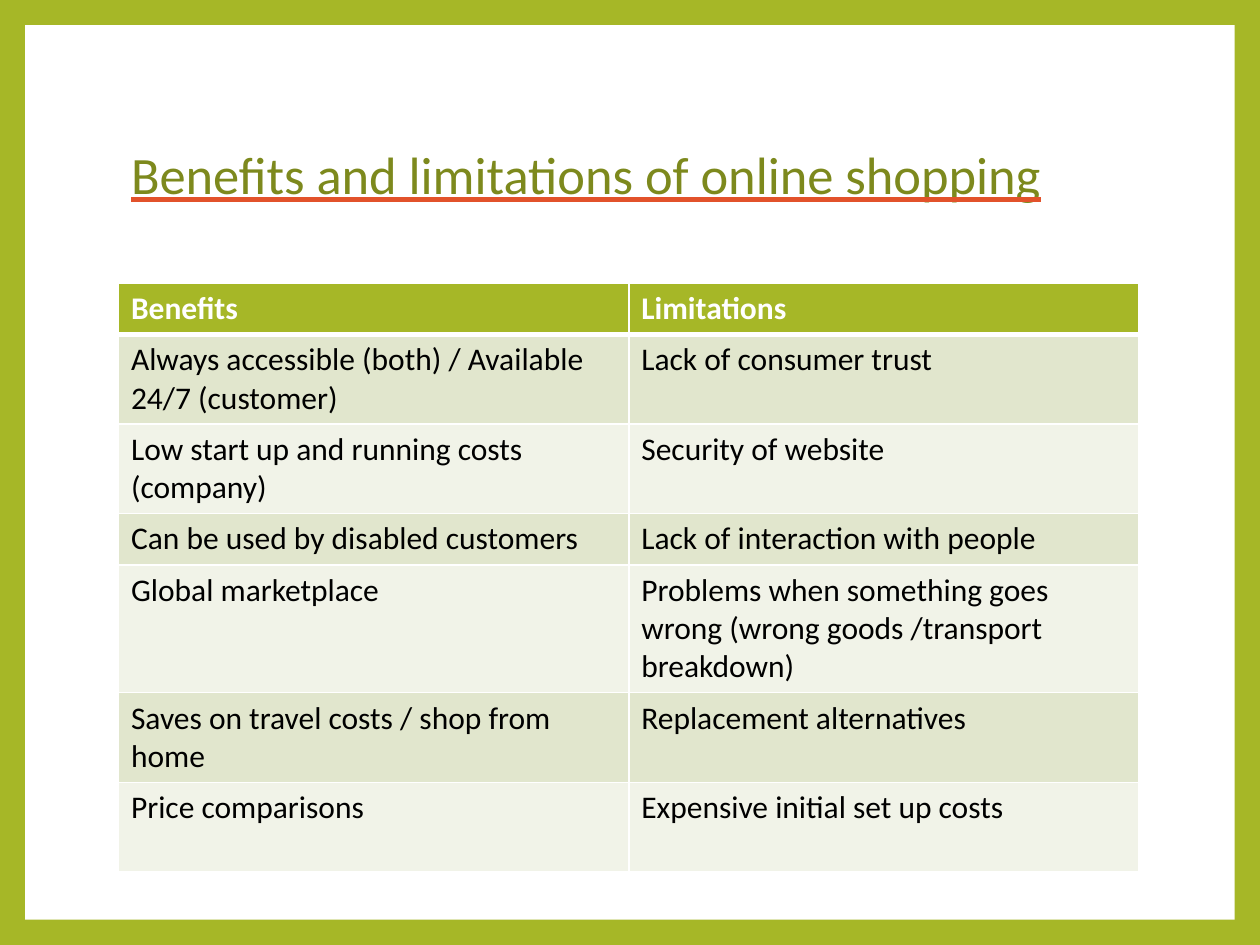
from lxml import etree
from pptx import Presentation
from pptx.dml.color import RGBColor
from pptx.enum import shapes, text
from pptx.oxml import ns
from pptx.util import Pt

HUES = {
    "green": "A6B727", "olive": "7D891D", "rust": "E2522B",
    "white": "FFFFFF", "black": "000000",
    "band": "E1E6CD", "pale": "F1F3E8",
}
FONT = "Calibri"
ROWS = [
    ("Benefits", "Limitations"),
    ("Always accessible (both) / Available 24/7 (customer)",
     "Lack of consumer trust"),
    ("Low start up and running costs (company)", "Security of website"),
    ("Can be used by disabled customers", "Lack of interaction with people"),
    ("Global marketplace",
     "Problems when something goes wrong (wrong goods /transport breakdown)"),
    ("Saves on travel costs / shop from home", "Replacement alternatives"),
    ("Price comparisons", "Expensive initial set up costs"),
]


def hue(name):
    return RGBColor.from_string(HUES[name])


def style(font, size, name, bold=False):
    font.name, font.size, font.bold = FONT, Pt(size), bold
    font.color.rgb = hue(name)


def solid(parent, name):
    fill = etree.SubElement(parent, ns.qn("a:solidFill"))
    etree.SubElement(fill, ns.qn("a:srgbClr"), val=HUES[name])


def add_frame(slide, box):
    """Green backdrop with a white panel behind everything else."""
    slide.background.fill.solid()
    slide.background.fill.fore_color.rgb = hue("green")
    panel = slide.shapes.add_shape(
        shapes.MSO_SHAPE.RECTANGLE, *map(Pt, box))
    panel.shadow.inherit = False
    panel.fill.solid()
    panel.fill.fore_color.rgb = hue("white")
    panel.line.fill.background()
    slide.shapes.title._element.addprevious(panel._element)


def add_title(slide, box, words):
    title = slide.shapes.title
    title.left, title.top, title.width, title.height = map(Pt, box)
    frame = title.text_frame
    frame.auto_size = text.MSO_AUTO_SIZE.NONE
    frame.vertical_anchor = text.MSO_ANCHOR.MIDDLE
    para = frame.paragraphs[0]
    para.alignment = text.PP_ALIGN.LEFT
    para.line_spacing = 0.9
    run = para.add_run()
    run.text = words
    style(run.font, 30, "olive")
    run.font.underline = True
    line = etree.Element(ns.qn("a:uFill"))
    solid(line, "rust")
    run.font._element.find(ns.qn("a:solidFill")).addnext(line)


def add_edges(cell, top, base):
    props = cell._tc.get_or_add_tcPr()
    for side, width in zip("LRTB", (1, 1, top, base)):
        line = etree.SubElement(
            props, ns.qn("a:ln" + side), w=str(Pt(width)))
        solid(line, "white")


def add_grid(slide, box, rows):
    high = box[3] / len(rows)
    table = slide.shapes.add_table(
        len(rows), len(rows[0]), *map(Pt, box)).table
    for i, row in enumerate(rows):
        head = i == 0
        table.rows[i].height = Pt(high)
        shade = "green" if head else "band" if i % 2 else "pale"
        for j, words in enumerate(row):
            cell = table.cell(i, j)
            add_edges(cell, 3 if i == 1 else 1, 3 if head else 1)
            cell.fill.solid()
            cell.fill.fore_color.rgb = hue(shade)
            cell.text = words
            style(cell.text_frame.paragraphs[0].font, 18,
                  "white" if head else "black", head)
    table.rows[len(rows) - 1].height = Pt(51)


def main():
    deck = Presentation()
    deck.slide_width, deck.slide_height = Pt(720), Pt(540)
    slide = deck.slides.add_slide(deck.slide_layouts[5])
    add_frame(slide, (14.4, 14.4, 691.2, 511.2))
    add_title(slide, (67.7, 48.2, 583.2, 106.6),
              "Benefits and limitations of online shopping")
    add_grid(slide, (67.7, 162, 583.2, 204.4), ROWS)
    deck.save("out.pptx")


if __name__ == "__main__":
    main()
